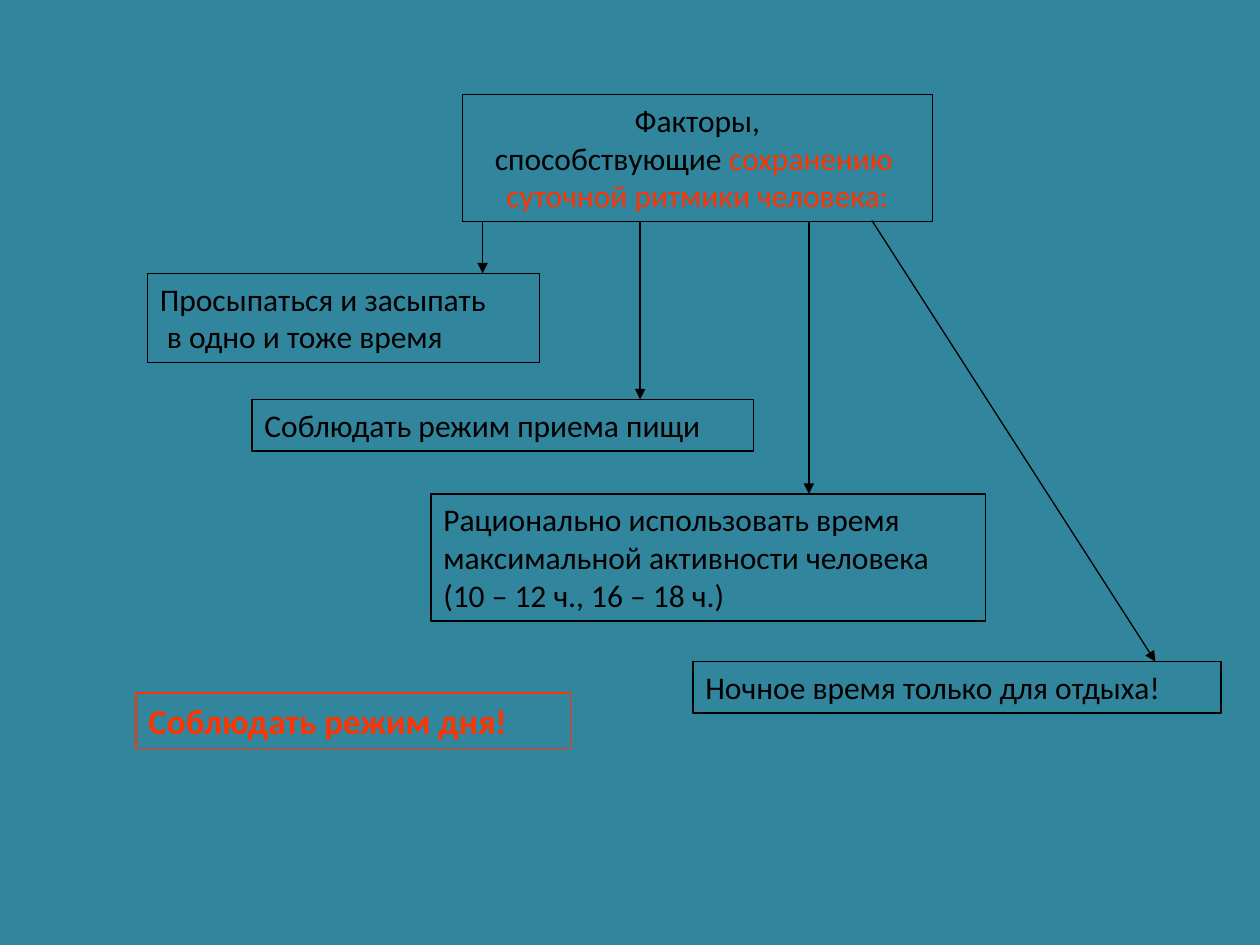
from dataclasses import dataclass

from lxml import etree
from pptx import Presentation
from pptx.dml.color import RGBColor
from pptx.enum import shapes, text
from pptx.oxml import ns
from pptx.util import Inches, Pt


@dataclass(frozen=True)
class Theme:
    back: RGBColor = RGBColor(0x31, 0x85, 0x9C)
    ink: RGBColor = RGBColor(0, 0, 0)
    accent: RGBColor = RGBColor(0xFF, 0x33, 0x00)
    font: str = "Calibri"
    body: Pt = Pt(18)
    motto: Pt = Pt(20)
    line: Pt = Pt(0.75)


theme = Theme()
ink, accent = theme.ink, theme.accent


def add_box(s, box, lines, color=ink, size=theme.body, bold=False,
            align=text.PP_ALIGN.LEFT):
    """Outlined box; each line is a list of (wording, colour) runs."""
    sp = s.shapes.add_shape(shapes.MSO_SHAPE.RECTANGLE, *map(Inches, box))
    sp.shadow.inherit = False
    sp.fill.background()
    sp.line.color.rgb = color
    sp.line.width = theme.line
    tf = sp.text_frame
    frame = {"word_wrap": True, "vertical_anchor": text.MSO_ANCHOR.TOP,
             "auto_size": text.MSO_AUTO_SIZE.SHAPE_TO_FIT_TEXT}
    for name, value in frame.items():
        setattr(tf, name, value)
    for i, runs in enumerate(lines):
        p = tf.paragraphs[0] if i == 0 else tf.add_paragraph()
        p.alignment = align
        for wording, run_color in runs:
            r = p.add_run()
            r.text = wording
            style = {"name": theme.font, "size": size, "bold": bold}
            for name, value in style.items():
                setattr(r.font, name, value)
            r.font.color.rgb = run_color


def add_arrow(s, start, end):
    c = s.shapes.add_connector(shapes.MSO_CONNECTOR.STRAIGHT,
                               *map(Inches, start + end))
    c.line.color.rgb = ink
    c.line.width = theme.line
    etree.SubElement(c.line._get_or_add_ln(), ns.qn("a:tailEnd"), type="triangle")
    etree.SubElement(c._element.spPr, ns.qn("a:effectLst"))


# Slide and background
prs = Presentation()
prs.slide_width, prs.slide_height = Inches(10), Inches(7.5)
s = prs.slides.add_slide(prs.slide_layouts[6])
s.background.fill.solid()
s.background.fill.fore_color.rgb = theme.back

# Heading
add_box(s, (3.67, 0.75, 3.73, 1.01), [
    [("Факторы,", ink)],
    [("способствующие ", ink), ("сохранению ", accent)],
    [("суточной ритмики человека:", accent)],
], align=text.PP_ALIGN.CENTER)

# Motto
add_box(s, (1.08, 5.5, 3.45, 0.44), [[("Соблюдать режим дня!", accent)]],
        color=accent, size=theme.motto, bold=True)

# Factors: box, lines, arrow x at the heading and at the box
factors = [
    ((1.17, 2.17, 3.11, 0.71),
     ["Просыпаться и засыпать", " в одно и тоже время"], 3.83, 3.83),
    ((2, 3.17, 3.98, 0.41), ["Соблюдать режим приема пищи"], 5.08, 5.08),
    ((3.42, 3.92, 4.4, 1.01),
     ["Рационально использовать время", "максимальной активности человека",
      "(10 – 12 ч., 16 – 18 ч.)"], 6.42, 6.42),
    ((5.5, 5.25, 4.19, 0.41), ["Ночное время только для отдыха!"], 6.92, 9.17),
]
for box, lines, *_ in factors:
    add_box(s, box, [[(line, ink)] for line in lines])

# Arrows from the heading to the top of each factor
for box, _, x_from, x_to in factors:
    add_arrow(s, (x_from, 1.75), (x_to, box[1]))

prs.save("out.pptx")
